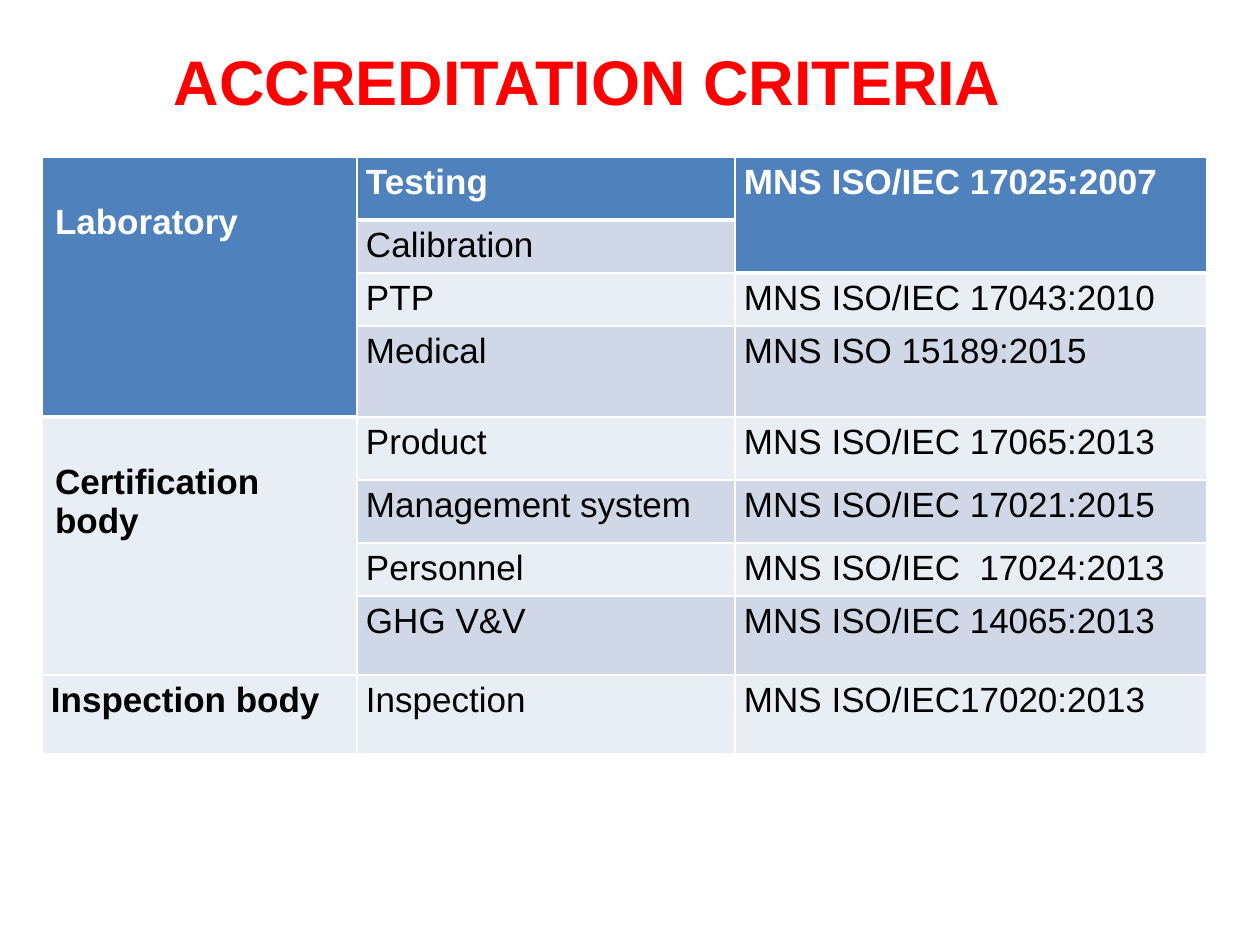
from dataclasses import dataclass

from lxml import etree
from pptx import Presentation, util as u
from pptx.dml.color import RGBColor
from pptx.enum import text
from pptx.oxml.ns import qn

EMU_PER_PX = 914400 / 126


def px(length):
    return u.Emu(round(length * EMU_PER_PX))


@dataclass(frozen=True)
class Theme:
    font: str = "Arial"
    title_size: int = 36
    body_size: int = 20
    title: str = "FF0000"
    header: str = "4F81BD"
    band_dark: str = "D0D8E8"
    band_light: str = "E9EDF4"
    white: str = "FFFFFF"
    black: str = "000000"


@dataclass(frozen=True)
class Entry:
    """A table cell's content; rows is the number of rows it spans."""
    row: int
    column: int
    words: str
    rows: int = 1
    bold: bool = False
    lowered: bool = False


class SlideBuilder:
    def __init__(self, slide, theme):
        self.slide = slide
        self.theme = theme

    def format_runs(self, paragraph, size, color, bold):
        for run in paragraph.runs:
            run.font.name = self.theme.font
            run.font.size = u.Pt(size)
            run.font.bold = bold
            run.font.color.rgb = RGBColor.from_string(color)

    def title(self, words, left, top, width, height):
        shape = self.slide.shapes.add_textbox(px(left), px(top), px(width), px(height))
        frame = shape.text_frame
        frame.word_wrap = True
        frame.vertical_anchor = text.MSO_ANCHOR.MIDDLE
        frame.text = words
        paragraph = frame.paragraphs[0]
        paragraph.alignment = text.PP_ALIGN.CENTER
        self.format_runs(paragraph, self.theme.title_size, self.theme.title, True)

    def borders(self, cell, bottom_width):
        properties = cell._tc.get_or_add_tcPr()
        sides = {"lnL": 1, "lnR": 1, "lnT": 1, "lnB": bottom_width}
        for index, (side, width) in enumerate(sides.items()):
            line = etree.Element(qn(f"a:{side}"), w=str(u.Pt(width)))
            fill = etree.SubElement(line, qn("a:solidFill"))
            etree.SubElement(fill, qn("a:srgbClr"), val=self.theme.white)
            properties.insert(index, line)

    def cell(self, table, entry):
        theme = self.theme
        cell = table.cell(entry.row, entry.column)
        if entry.rows > 1:
            cell.merge(table.cell(entry.row + entry.rows - 1, entry.column))
        is_header = entry.row == 0
        band = theme.band_dark if entry.row % 2 else theme.band_light
        cell.fill.solid()
        cell.fill.fore_color.rgb = RGBColor.from_string(theme.header if is_header else band)
        self.borders(cell, 3 if is_header else 1)

        cell.margin_left = cell.margin_right = px(13 if entry.lowered else 9)
        cell.margin_top = px(46 if entry.lowered else 0)
        cell.margin_bottom = px(0)
        cell.text_frame.text = entry.words
        paragraph = cell.text_frame.paragraphs[0]
        if not entry.lowered:
            paragraph.alignment = text.PP_ALIGN.JUSTIFY
            paragraph.line_spacing = 1.15
        color = theme.white if is_header else theme.black
        self.format_runs(paragraph, theme.body_size, color, is_header or entry.bold)

    def table(self, entries, left, top, widths, heights):
        frame = self.slide.shapes.add_table(
            len(heights), len(widths), px(left), px(top), px(sum(widths)), px(sum(heights)))
        table = frame.table
        table.first_row = table.horz_banding = False
        for column, width in zip(table.columns, widths):
            column.width = px(width)
        for row, height in zip(table.rows, heights):
            row.height = px(height)
        for entry in entries:
            self.cell(table, entry)


BODIES = [
    Entry(0, 0, "Laboratory", rows=4, lowered=True),
    Entry(4, 0, "Certification body", rows=4, bold=True, lowered=True),
    Entry(8, 0, "Inspection body", bold=True),
]
FIELDS = ["Testing", "Calibration", "PTP", "Medical", "Product",
          "Management system", "Personnel", "GHG V&V", "Inspection"]
LATER_STANDARDS = ["MNS ISO/IEC 17043:2010", "MNS ISO 15189:2015", "MNS ISO/IEC 17065:2013",
                   "MNS ISO/IEC 17021:2015", "MNS ISO/IEC  17024:2013",
                   "MNS ISO/IEC 14065:2013", "MNS ISO/IEC17020:2013"]


def main():
    presentation = Presentation()
    presentation.slide_width, presentation.slide_height = px(1260), px(945)
    slide = presentation.slides.add_slide(presentation.slide_layouts[6])
    builder = SlideBuilder(slide, Theme())
    builder.title("ACCREDITATION CRITERIA", 73, 32, 1029, 97)

    fields = [Entry(row, 1, words) for row, words in enumerate(FIELDS)]
    standards = [Entry(0, 2, "MNS ISO/IEC 17025:2007", rows=2)]
    standards += [Entry(row, 2, words) for row, words in enumerate(LATER_STANDARDS, start=2)]
    builder.table(BODIES + fields + standards, 42, 157,
                  widths=[315, 378, 472],
                  heights=[63, 53, 53, 91, 63, 63, 53, 79, 79])
    presentation.save("out.pptx")


if __name__ == "__main__":
    main()
